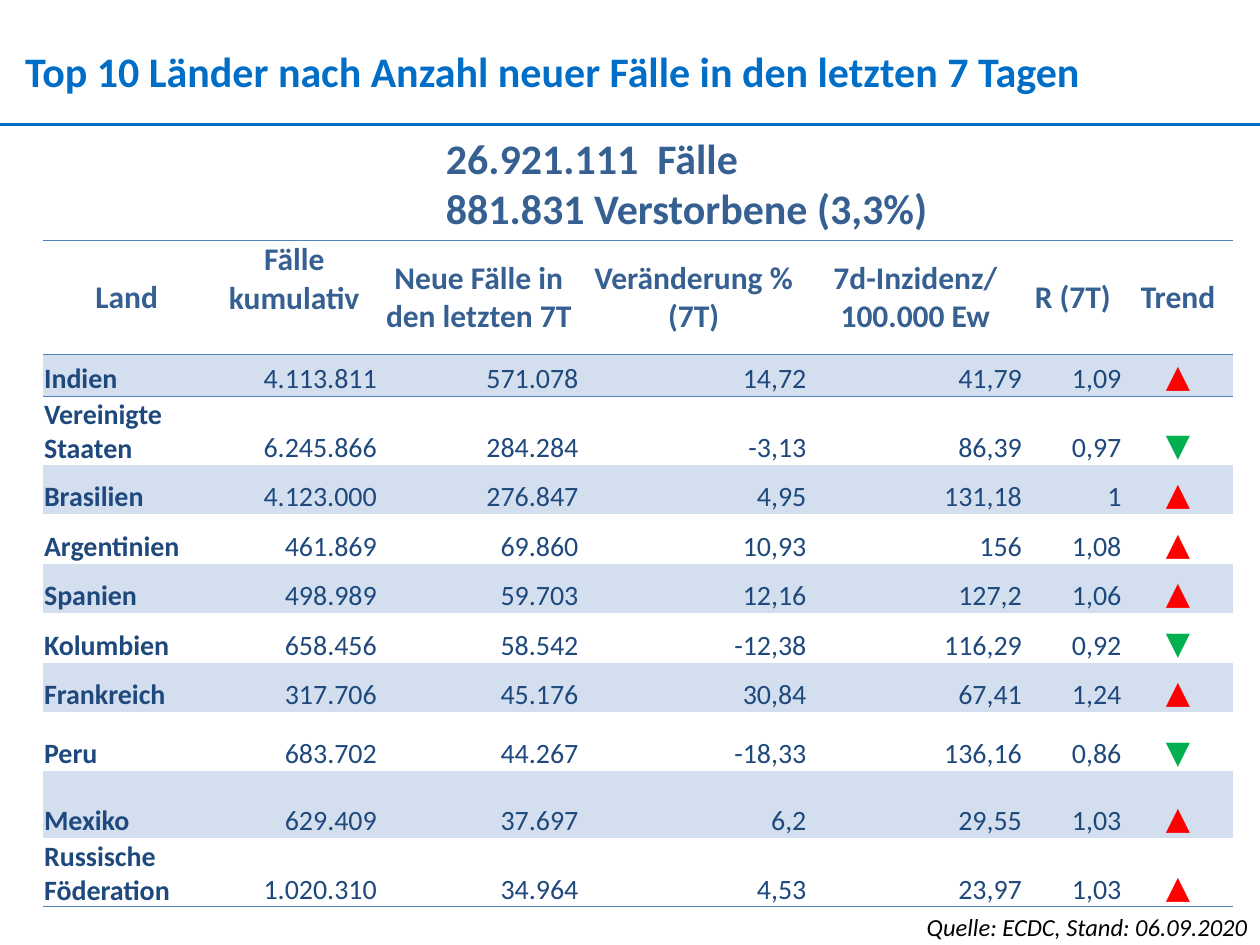
from dataclasses import dataclass, field

import pptx
import pptx.dml.color
import pptx.enum.shapes
import pptx.enum.text
import pptx.oxml
import pptx.oxml.ns
import pptx.util

Pt = pptx.util.Pt
ALIGN = pptx.enum.text.PP_ALIGN
ANCHOR = pptx.enum.text.MSO_ANCHOR
FONT = "Calibri"
NO_STYLE = "{2D5ABB26-0587-4C30-8999-92F81FD0307C}"
COLORS = {
    "title": "006EC7",
    "heading": "366092",
    "body": "1F497D",
    "source": "000000",
    "band": "D3DFEE",
    "border": "4F81BD",
    "▲": "FF0000",
    "▼": "00B050",
}
COL_WIDTHS = [95.76, 95.76, 115.2, 130.32, 123.12, 56.88, 63.36]
ROW_HEIGHTS = [65, 24, 39] + [28.3] * 5 + [33.8, 38.2, 39]
HEADERS = ["Land", "Fälle kumulativ", "Neue Fälle in den letzten 7T", "Veränderung % (7T)",
           "7d-Inzidenz/ 100.000 Ew", "R (7T)", "Trend"]
COUNTRIES = [
    ["Indien", "4.113.811", "571.078", "14,72", "41,79", "1,09", "▲"],
    ["Vereinigte Staaten", "6.245.866", "284.284", "-3,13", "86,39", "0,97", "▼"],
    ["Brasilien", "4.123.000", "276.847", "4,95", "131,18", "1", "▲"],
    ["Argentinien", "461.869", "69.860", "10,93", "156", "1,08", "▲"],
    ["Spanien", "498.989", "59.703", "12,16", "127,2", "1,06", "▲"],
    ["Kolumbien", "658.456", "58.542", "-12,38", "116,29", "0,92", "▼"],
    ["Frankreich", "317.706", "45.176", "30,84", "67,41", "1,24", "▲"],
    ["Peru", "683.702", "44.267", "-18,33", "136,16", "0,86", "▼"],
    ["Mexiko", "629.409", "37.697", "6,2", "29,55", "1,03", "▲"],
    ["Russische Föderation", "1.020.310", "34.964", "4,53", "23,97", "1,03", "▲"],
]


@dataclass
class TextStyle:
    color: str
    size: float
    align: ALIGN = ALIGN.LEFT
    font: dict = field(default_factory=dict)


@dataclass
class Label:
    lines: list[str]
    box: tuple[float, float, float, float]
    style: TextStyle
    frame: dict = field(default_factory=dict)


LABELS = [
    Label(["Top 10 Länder nach Anzahl neuer Fälle in den letzten 7 Tagen"],
          (14.4, 25.92, 693.36, 28.8), TextStyle("title", 24, font={"bold": True}),
          dict.fromkeys(["margin_left", "margin_top", "margin_right", "margin_bottom"], 0)),
    Label(["26.921.111  Fälle", "881.831 Verstorbene (3,3%)"],
          (247.68, 72, 298.08, 65.52), TextStyle("heading", 24, font={"bold": True}),
          {"word_wrap": False}),
    Label(["Quelle: ECDC, Stand: 06.09.2020"],
          (465.12, 517.68, 254.88, 24.48),
          TextStyle("source", 14, ALIGN.RIGHT, {"italic": True})),
]


def rgb(name: str) -> pptx.dml.color.RGBColor:
    return pptx.dml.color.RGBColor.from_string(COLORS[name])


def set_attrs(target, values: dict) -> None:
    for name, value in values.items():
        setattr(target, name, value)


def write(p, text: str, style: TextStyle) -> None:
    p.alignment = style.align
    r = p.add_run()
    r.text = text
    set_attrs(r.font, {"name": FONT, "size": Pt(style.size), **style.font})
    r.font.color.rgb = rgb(style.color)


def draw_label(s, label: Label) -> None:
    tf = s.shapes.add_textbox(*map(Pt, label.box)).text_frame
    set_attrs(tf, {"word_wrap": True, **label.frame})
    for i, line in enumerate(label.lines):
        write(tf.add_paragraph() if i else tf.paragraphs[0], line, label.style)


def draw_rule(s) -> None:
    line = s.shapes.add_connector(
        pptx.enum.shapes.MSO_CONNECTOR.STRAIGHT, Pt(0), Pt(71.28), Pt(720), Pt(71.28))
    line.line.color.rgb = rgb("title")
    line.line.width = Pt(1.5)
    pptx.oxml.ns.qn("a:effectLst")
    line._element.spPr.append(pptx.oxml.parse_xml(
        f'<a:effectLst {pptx.oxml.ns.nsdecls("a")}/>'))


def add_border(cell, side: str) -> None:
    cell._tc.get_or_add_tcPr().append(pptx.oxml.parse_xml(
        f'<a:{side} {pptx.oxml.ns.nsdecls("a")} w="{Pt(1)}"><a:solidFill>'
        f'<a:srgbClr val="{COLORS["border"]}"/></a:solidFill></a:{side}>'))


def cell_style(row: int, col: int, text: str) -> TextStyle:
    if row == 0:
        return TextStyle("heading", 18, ALIGN.CENTER, {"bold": True})
    if text in COLORS:
        return TextStyle(text, 18, ALIGN.CENTER, {"bold": False})
    return TextStyle("body", 16, ALIGN.RIGHT if col else ALIGN.LEFT, {"bold": col == 0})


def draw_cell(cell, row: int, col: int, text: str) -> None:
    side, top = (4.32, 0) if row == 0 else (0.72, 0.72)
    bottom = 21 if (row, col) == (0, 1) else 0
    set_attrs(cell, {
        "margin_left": Pt(side), "margin_right": Pt(side),
        "margin_top": Pt(top), "margin_bottom": Pt(bottom),
        "vertical_anchor": ANCHOR.BOTTOM if row else ANCHOR.MIDDLE,
    })
    if row < 2:
        add_border(cell, "lnT")
    if row in (0, len(COUNTRIES)):
        add_border(cell, "lnB")
    if row % 2:
        cell.fill.solid()
        cell.fill.fore_color.rgb = rgb("band")
    else:
        cell.fill.background()
    write(cell.text_frame.paragraphs[0], text, cell_style(row, col, text))


def draw_table(s) -> None:
    rows = [HEADERS] + COUNTRIES
    table = s.shapes.add_table(
        len(rows), len(HEADERS), Pt(24.48), Pt(137.52),
        Pt(sum(COL_WIDTHS)), Pt(sum(ROW_HEIGHTS))).table
    table._tbl.tblPr.find(pptx.oxml.ns.qn("a:tableStyleId")).text = NO_STYLE
    table.horz_banding = False
    for column, width in zip(table.columns, COL_WIDTHS):
        column.width = Pt(width)
    for i, (row, height) in enumerate(zip(rows, ROW_HEIGHTS)):
        table.rows[i].height = Pt(height)
        for j, text in enumerate(row):
            draw_cell(table.cell(i, j), i, j, text)


def main() -> None:
    prs = pptx.Presentation()
    prs.slide_width, prs.slide_height = Pt(720), Pt(540)
    s = prs.slides.add_slide(prs.slide_layouts[6])
    draw_rule(s)
    for label in LABELS:
        draw_label(s, label)
    draw_table(s)
    prs.save("out.pptx")


if __name__ == "__main__":
    main()
